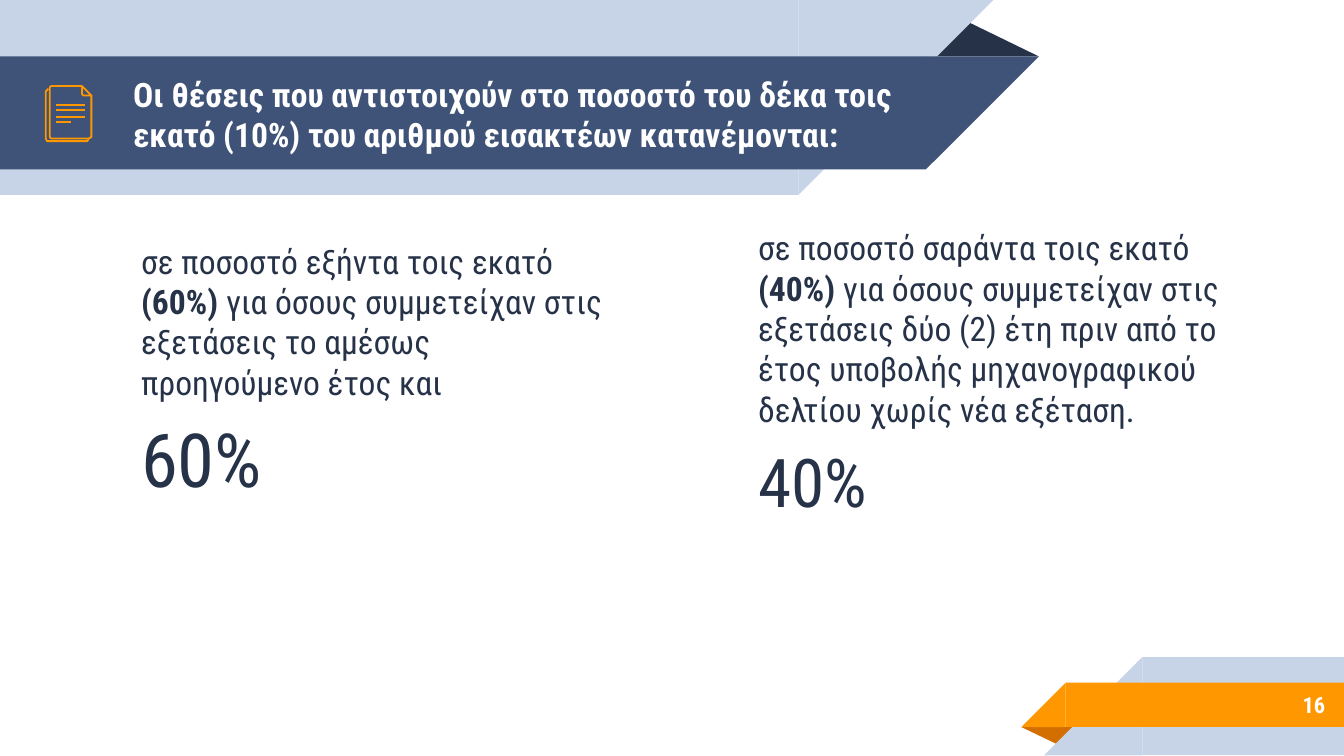
from typing import NamedTuple

from lxml.etree import SubElement
from pptx import Presentation
from pptx.dml.color import RGBColor
from pptx.enum.shapes import MSO_CONNECTOR as CONN, MSO_SHAPE as SHAPE
from pptx.enum.text import MSO_ANCHOR as ANCHOR, MSO_AUTO_SIZE as AUTO, PP_ALIGN as ALIGN
from pptx.oxml.ns import qn
from pptx.util import Inches, Pt

FONT = "Roboto Condensed"
NAVY, BLUE, PALE = "263248", "3F5378", "C7D3E6"
ORANGE, RUST, WHITE = "FF9800", "D26F00", "FFFFFF"
WIDTH = 10
HEIGHT = WIDTH * 9 / 16


class Box(NamedTuple):
    x: float
    y: float
    w: float
    h: float


class Band(NamedTuple):
    rect: Box
    color: str
    right: bool


class Fold(NamedTuple):
    box: Box
    color: str
    rotation: int


class Column(NamedTuple):
    box: Box
    lead: str
    share: str
    rest: str
    size: int


TOP_FOLD = Fold(Box(6.88, 0.14, 0.85, 0.28), NAVY, 0)
TOP_BANDS = [
    Band(Box(0, 0, 5.94, 1.45), PALE, True),
    Band(Box(0, 0.42, 6.89, 0.84), BLUE, True),
]
BOTTOM_FOLD = Fold(Box(7.6, 5.41, 0.43, 0.14), RUST, 180)
BOTTOM_BANDS = [
    Band(Box(8.5, 4.89, 1.5, 0.73), PALE, False),
    Band(Box(7.93, 5.08, 2.07, 0.33), ORANGE, False),
]
TITLE = ("Οι θέσεις που αντιστοιχούν στο ποσοστό του δέκα τοις εκατό (10%) "
         "του αριθμού εισακτέων κατανέμονται:")
COLUMNS = [
    Column(Box(0.95, 1.69, 3.74, 2.96), "σε ποσοστό εξήντα τοις εκατό ", "60%",
           "για όσους συμμετείχαν στις εξετάσεις το αμέσως προηγούμενο έτος και", 40),
    Column(Box(5.54, 1.59, 3.87, 1.46), "σε ποσοστό σαράντα τοις εκατό ", "40%",
           "για όσους συμμετείχαν στις εξετάσεις δύο (2) έτη πριν από το έτος "
           "υποβολής μηχανογραφικού δελτίου χωρίς νέα εξέταση.", 36),
]
BACK_PAGE = [(0.66, 1.03), (0.65, 1.05), (0.64, 1.05), (0.36, 1.05), (0.35, 1.05),
             (0.34, 1.03), (0.34, 0.68), (0.35, 0.67), (0.36, 0.66)]
FRONT_PAGE = [(0.68, 0.71), (0.68, 1.01), (0.68, 1.02), (0.66, 1.03), (0.38, 1.03),
              (0.37, 1.02), (0.37, 1.01), (0.37, 0.66), (0.37, 0.65), (0.38, 0.64),
              (0.61, 0.64)]
CORNER = [(0.61, 0.7), (0.61, 0.64), (0.68, 0.71), (0.63, 0.71), (0.62, 0.71)]
TEXT_LINES = [(0.78, 0.63), (0.82, 0.63), (0.87, 0.63), (0.91, 0.53)]


def rgb(color: str) -> RGBColor:
    return RGBColor.from_string(color)


def emu(box: Box) -> list:
    return [Inches(v) for v in box]


def add_preset(s, kind, box: Box, color: str):
    sp = s.shapes.add_shape(kind, *emu(box))
    sp.shadow.inherit = False
    sp.fill.solid()
    sp.fill.fore_color.rgb = rgb(color)
    sp.line.fill.background()
    return sp


def add_fold(s, fold: Fold) -> None:
    sp = add_preset(s, SHAPE.ISOSCELES_TRIANGLE, fold.box, fold.color)
    sp.adjustments[0] = 0.324
    sp.rotation = fold.rotation


def add_band(s, band: Band) -> None:
    x, y, w, h = band.rect
    add_preset(s, SHAPE.RECTANGLE, band.rect, band.color)
    tip_x = x + w if band.right else x - h
    tip = add_preset(s, SHAPE.RIGHT_TRIANGLE, Box(tip_x, y, h, h), band.color)
    tip.rotation = 180 if band.right else 0
    tip.element.spPr.find(qn("a:xfrm")).set("flipH", "1")


def set_line(sp) -> None:
    sp.line.color.rgb = rgb(ORANGE)
    sp.line.width = Pt(0.96)


def add_outline(s, points: list, close: bool) -> None:
    pts = [(Inches(x), Inches(y)) for x, y in points]
    builder = s.shapes.build_freeform(*pts[0])
    builder.add_line_segments(pts[1:], close=close)
    sp = builder.convert_to_shape()
    sp.shadow.inherit = False
    sp.fill.background()
    set_line(sp)


def add_text_line(s, y: float, right: float) -> None:
    cxn = s.shapes.add_connector(CONN.STRAIGHT, Inches(right), Inches(y), Inches(0.42), Inches(y))
    set_line(cxn)
    SubElement(cxn.element.spPr, qn("a:effectLst"))


def set_frame(sp, anchor):
    tf = sp.text_frame
    tf.word_wrap = True
    tf.auto_size = AUTO.NONE
    tf.vertical_anchor = anchor
    tf.margin_left = tf.margin_right = tf.margin_top = tf.margin_bottom = Inches(0.1)
    return tf


def style_run(r, size: int, color: str, bold: bool = False) -> None:
    r.font.name = FONT
    r.font.size = Pt(size)
    r.font.bold = bold
    r.font.color.rgb = rgb(color)


def set_label(sp, text: str, size: int, align) -> None:
    tf = set_frame(sp, ANCHOR.MIDDLE)
    tf.text = text
    p = tf.paragraphs[0]
    p.alignment = align
    style_run(p.runs[0], size, WHITE, True)


def place(s, ph, box: Box) -> None:
    ph.left, ph.top, ph.width, ph.height = emu(box)
    s.shapes.element.append(ph.element)


def fill_column(s, ph, col: Column) -> None:
    place(s, ph, col.box)
    tf = set_frame(ph, ANCHOR.TOP)
    p = tf.paragraphs[0]
    for text, bold in [(col.lead, False), (f"({col.share}) ", True), (col.rest, False)]:
        r = p.add_run()
        r.text = text
        style_run(r, 18, NAVY, bold)
    total = tf.add_paragraph()
    total.text = col.share
    style_run(total.runs[0], col.size, NAVY)
    for p in tf.paragraphs:
        p.space_before = Pt(6)
        pPr = p._p.get_or_add_pPr()
        pPr.set("marL", "0")
        pPr.set("indent", "0")
        SubElement(pPr, qn("a:buNone"))


def main() -> None:
    prs = Presentation()
    prs.slide_width, prs.slide_height = Inches(WIDTH), Inches(HEIGHT)
    s = prs.slides.add_slide(prs.slide_layouts[3])
    title, *bodies = list(s.placeholders)

    for fold, bands in [(TOP_FOLD, TOP_BANDS), (BOTTOM_FOLD, BOTTOM_BANDS)]:
        add_fold(s, fold)
        for band in bands:
            add_band(s, band)

    place(s, title, Box(0.89, 0.43, 6.37, 0.84))
    set_label(title, TITLE, 18, ALIGN.LEFT)
    for ph, col in zip(bodies, COLUMNS):
        fill_column(s, ph, col)
    number = s.shapes.add_textbox(*emu(Box(8.33, 5.07, 1.63, 0.35)))
    set_label(number, "16", 12, ALIGN.RIGHT)

    add_outline(s, BACK_PAGE, False)
    add_outline(s, FRONT_PAGE, False)
    for y, right in TEXT_LINES:
        add_text_line(s, y, right)
    add_outline(s, CORNER, True)
    prs.save("out.pptx")


if __name__ == "__main__":
    main()
